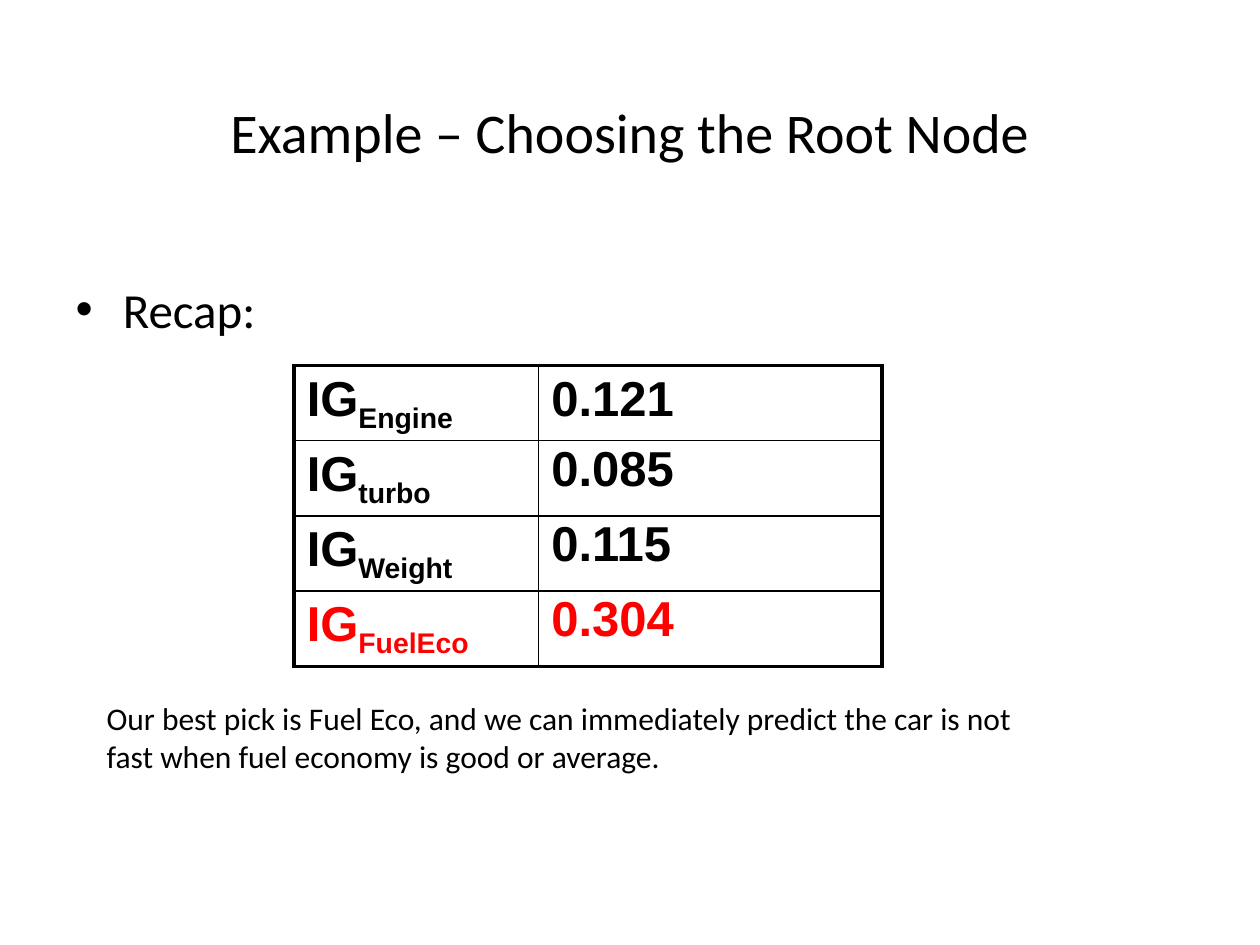
from dataclasses import dataclass

from lxml.etree import SubElement
from pptx import Presentation
from pptx.dml.color import RGBColor
from pptx.enum.text import MSO_ANCHOR, MSO_AUTO_SIZE, PP_ALIGN
from pptx.oxml import parse_xml
from pptx.oxml.ns import nsdecls, qn
from pptx.util import Cm, Pt


@dataclass(frozen=True)
class Theme:
    ink: str = "000000"
    accent: str = "FF0000"
    text_font: str = "Calibri"
    table_font: str = "Arial"
    title_size: int = 32
    body_size: int = 28
    note_size: int = 18
    outer_line: float = 2.25
    inner_line: float = 1


class SlideBuilder:
    def __init__(self, slide, theme):
        self.slide = slide
        self.theme = theme

    def add_span(self, para, text, size, name=None, color=None, bold=False):
        span = para.add_run()
        span.text = text
        formats = {"size": Pt(size), "name": name or self.theme.text_font, "bold": bold}
        for key, value in formats.items():
            setattr(span.font, key, value)
        span.font.color.rgb = RGBColor.from_string(color or self.theme.ink)
        return span

    def place(self, box, left, top, width, height):
        frame = {"left": left, "top": top, "width": width, "height": height}
        for key, value in frame.items():
            setattr(box, key, Cm(value))

    def title(self, text, *area):
        box = self.slide.shapes.title
        self.place(box, *area)
        box.text_frame.vertical_anchor = MSO_ANCHOR.MIDDLE
        para = box.text_frame.paragraphs[0]
        para.alignment = PP_ALIGN.CENTER
        self.add_span(para, text, self.theme.title_size)

    def bullet(self, text, *area):
        box = self.slide.placeholders[1]
        self.place(box, *area)
        self.add_span(box.text_frame.paragraphs[0], text, self.theme.body_size)

    def note(self, text, *area):
        box = self.slide.shapes.add_textbox(*map(Cm, area))
        box.text_frame.word_wrap = True
        box.text_frame.auto_size = MSO_AUTO_SIZE.SHAPE_TO_FIT_TEXT
        self.add_span(box.text_frame.paragraphs[0], text, self.theme.note_size)

    def border(self, cell, outer_sides):
        """Draw all four cell borders, heavier on the outer sides."""
        properties = cell._tc.get_or_add_tcPr()
        for index, side in enumerate("LRTB"):
            weight = self.theme.outer_line if side in outer_sides else self.theme.inner_line
            line = parse_xml(f'<a:ln{side} {nsdecls("a")} w="{Pt(weight)}"/>')
            fill = SubElement(line, qn("a:solidFill"))
            SubElement(fill, qn("a:srgbClr"), val=self.theme.ink)
            properties.insert(index, line)

    def cell(self, cell, parts, color, line_spacing, outer_sides):
        """Fill a cell; any part after the first is set as a subscript."""
        cell.fill.background()
        para = cell.text_frame.paragraphs[0]
        para.line_spacing = line_spacing
        for index, text in enumerate(parts):
            span = self.add_span(para, text, self.theme.body_size,
                                 self.theme.table_font, color, True)
            if index:
                span._r.get_or_add_rPr().set("baseline", "-25000")
        self.border(cell, outer_sides)

    def gain_table(self, gains, left, top, widths, row_height):
        """Tabulate the information gains, with the largest one highlighted."""
        count = len(gains)
        table = self.slide.shapes.add_table(
            count, 2, Cm(left), Cm(top), Cm(sum(widths)), Cm(row_height * count)).table
        for flag in ("first_row", "horz_banding"):
            setattr(table, flag, False)
        for column, width in zip(table.columns, widths):
            column.width = Cm(width)
        best = max(gains.values())
        for index, (feature, gain) in enumerate(gains.items()):
            table.rows[index].height = Cm(row_height)
            color = self.theme.accent if gain == best else self.theme.ink
            ends = ("T" if index == 0 else "") + ("B" if index == count - 1 else "")
            self.cell(table.cell(index, 0), ("IG", feature), color, 1.0, "L" + ends)
            self.cell(table.cell(index, 1), (f"{gain:.3f}",), color,
                      0.9 if index else 1.0, "R" + ends)


def main():
    deck = Presentation()
    deck.slide_width, deck.slide_height = Cm(25.4), Cm(19.05)
    page = SlideBuilder(deck.slides.add_slide(deck.slide_layouts[1]), Theme())
    page.title("Example – Choosing the Root Node", 1.27, 1.27, 22.86, 2.75)
    page.bullet("Recap:", 1.27, 5.5, 11.22, 10.8)
    gains = {"Engine": 0.121, "turbo": 0.085, "Weight": 0.115, "FuelEco": 0.304}
    page.gain_table(gains, 5.93, 7.37, (4.93, 6.92), 1.51)
    page.note("Our best pick is Fuel Eco, and we can immediately predict the car is not "
              "fast when fuel economy is good or average.", 1.9, 13.97, 19.3, 1.78)
    deck.save("out.pptx")


if __name__ == "__main__":
    main()
